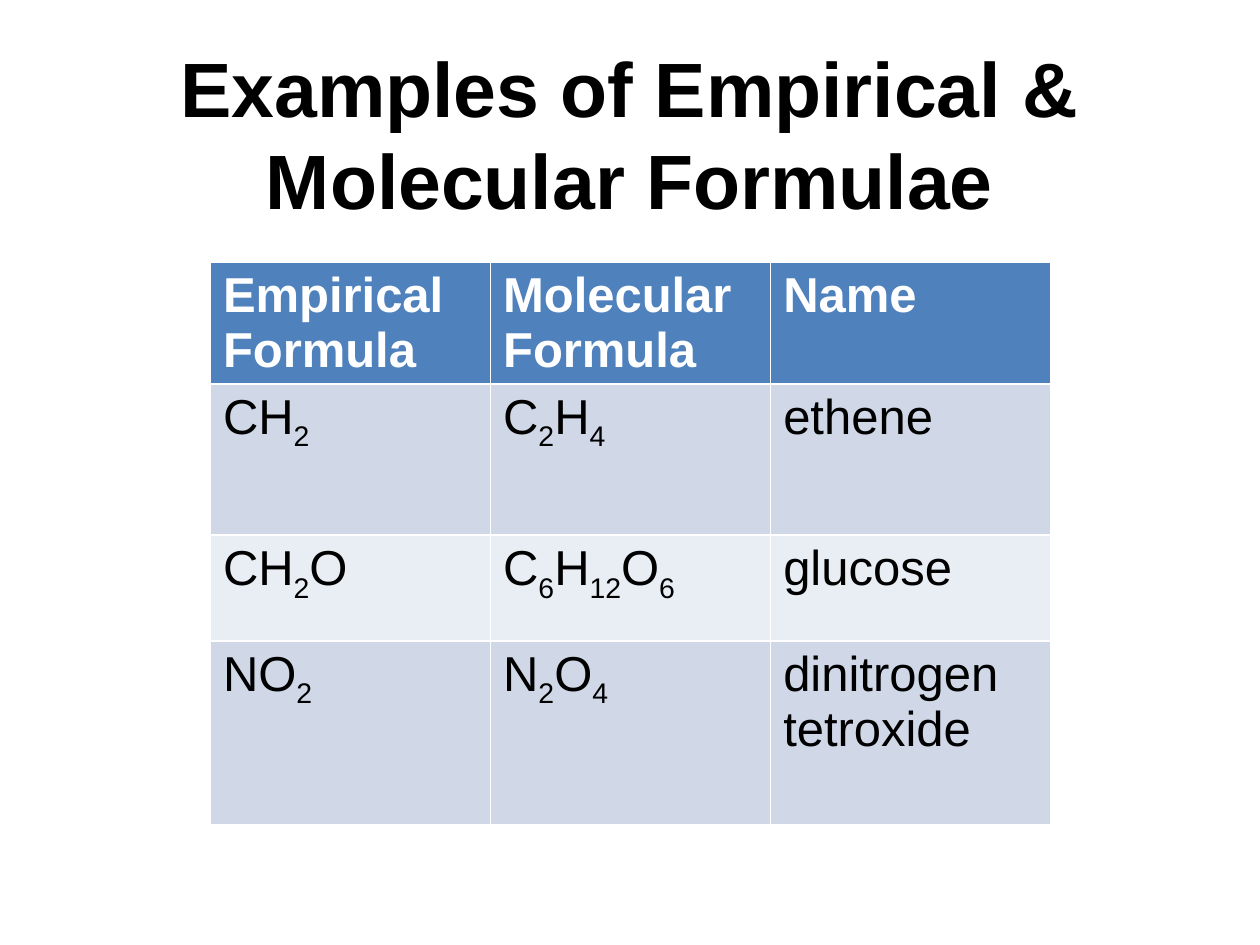
from itertools import groupby

from pptx import Presentation
from pptx.dml.color import RGBColor
from pptx.enum.text import MSO_ANCHOR, PP_ALIGN
from pptx.util import Inches, Pt

CENTER = PP_ALIGN.CENTER
MIDDLE = MSO_ANCHOR.MIDDLE
BLACK = RGBColor(0x00, 0x00, 0x00)
WHITE = RGBColor(0xFF, 0xFF, 0xFF)
HEADER_BLUE = RGBColor(0x4F, 0x81, 0xBD)
BAND_DARK = RGBColor(0xD0, 0xD8, 0xE8)
BAND_LIGHT = RGBColor(0xE9, 0xED, 0xF4)
FONT = "Arial"

HEADINGS = ["Empirical Formula", "Molecular Formula", "Name"]
COMPOUNDS = [
    ["CH2", "C2H4", "ethene"],
    ["CH2O", "C6H12O6", "glucose"],
    ["NO2", "N2O4", "dinitrogen tetroxide"],
]
ROW_HEIGHTS = [0.84, 1.2, 0.84, 1.46]


def add_run(p, text, size, color, bold):
    r = p.add_run()
    r.text = text
    r.font.name = FONT
    r.font.size = Pt(size)
    r.font.bold = bold
    r.font.color.rgb = color
    return r


def add_formula(p, text, size, color, bold):
    for is_digit, chars in groupby(text, str.isdigit):
        r = add_run(p, "".join(chars), size, color, bold)
        if is_digit:
            r._r.get_or_add_rPr().set("baseline", "-25000")


def place_title(s, left, top, width, height):
    title = s.shapes.title
    title.left, title.top, title.width, title.height = left, top, width, height
    tf = title.text_frame
    tf.word_wrap = True
    tf.vertical_anchor = MIDDLE
    p = tf.paragraphs[0]
    p.alignment = CENTER
    add_run(p, "Examples of Empirical & Molecular Formulae", 44, BLACK, True)


def add_formula_table(s, left, top, width, height):
    rows = [HEADINGS] + COMPOUNDS
    table = s.shapes.add_table(len(rows), len(HEADINGS), left, top, width, height).table
    for row, row_height in zip(table.rows, ROW_HEIGHTS):
        row.height = Inches(row_height)
    for i, texts in enumerate(rows):
        header = i == 0
        fill = HEADER_BLUE if header else (BAND_DARK if i % 2 else BAND_LIGHT)
        for j, text in enumerate(texts):
            cell = table.cell(i, j)
            cell.fill.solid()
            cell.fill.fore_color.rgb = fill
            p = cell.text_frame.paragraphs[0]
            add_formula(p, text, 28, WHITE if header else BLACK, header)


def main():
    prs = Presentation()
    prs.slide_width, prs.slide_height = Inches(10), Inches(7.5)
    s = prs.slides.add_slide(prs.slide_layouts[0])
    subtitle = s.placeholders[1].element
    subtitle.getparent().remove(subtitle)
    place_title(s, Inches(0.75), Inches(0.25), Inches(8.5), Inches(1.61))
    add_formula_table(s, Inches(1.67), Inches(2.08), Inches(6.67), Inches(sum(ROW_HEIGHTS)))
    prs.save("out.pptx")


if __name__ == "__main__":
    main()
